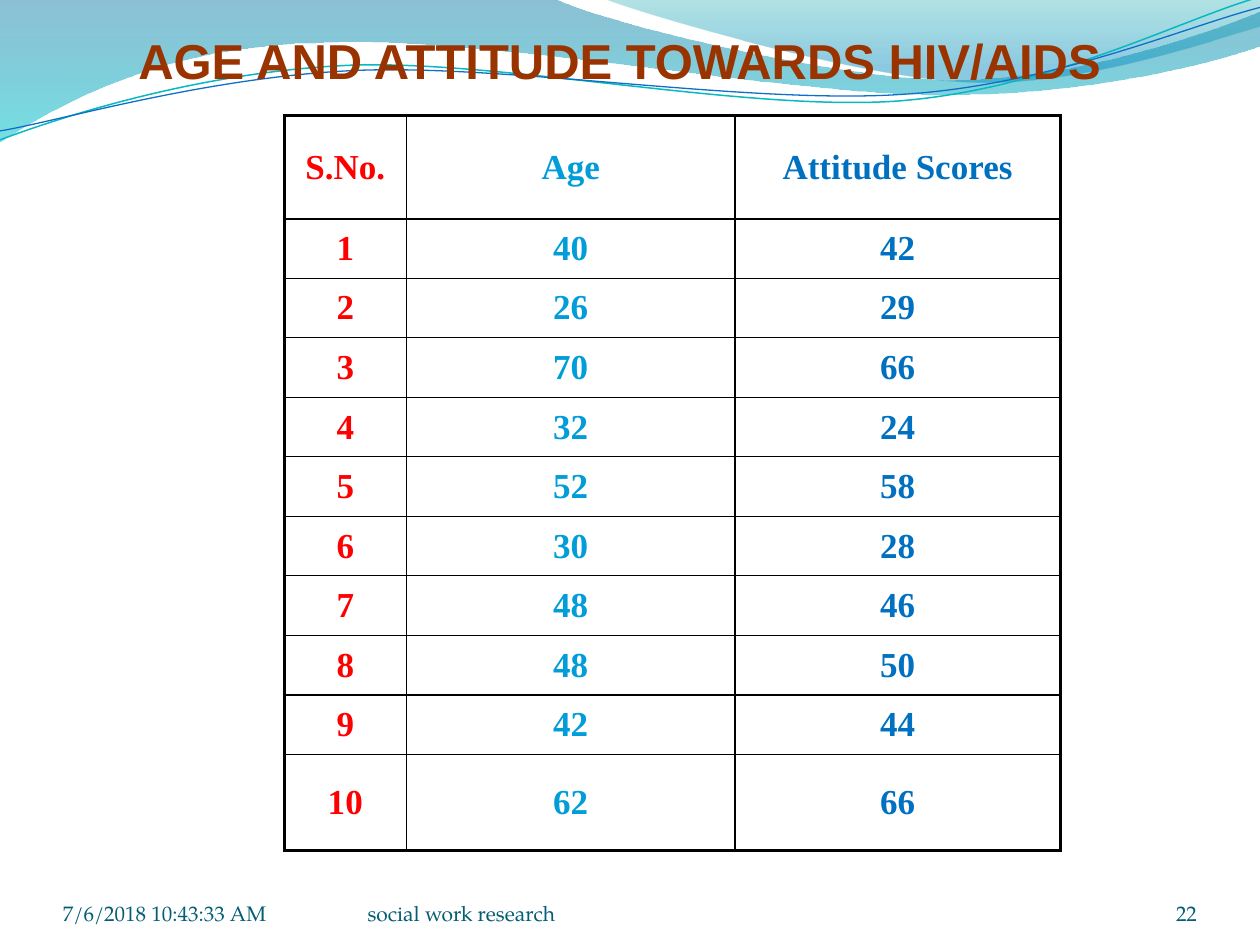
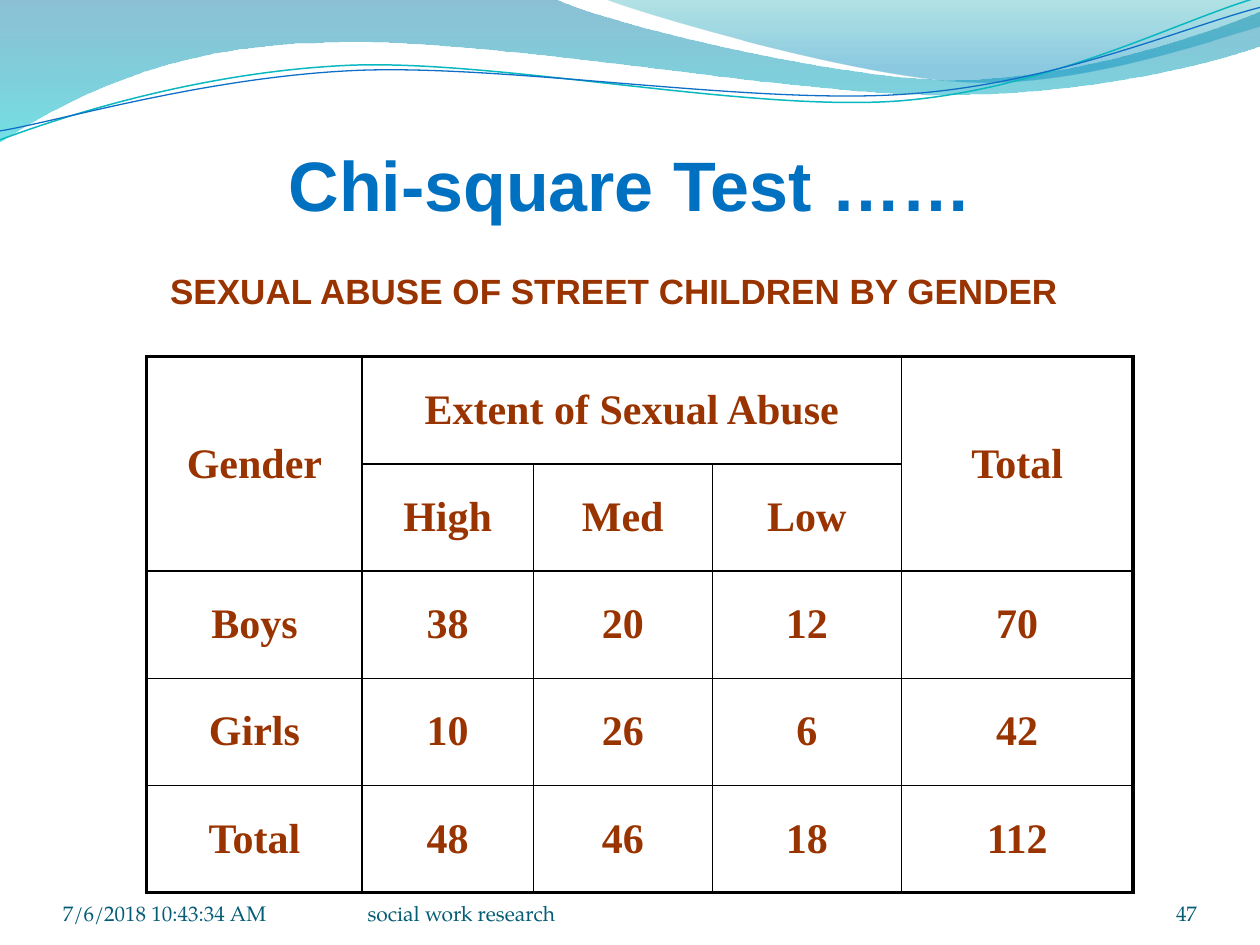
from dataclasses import dataclass

from pptx import Presentation
from pptx import util as u
from pptx.dml.color import RGBColor
from pptx.enum import text
from pptx.oxml import ns, xmlchemy


@dataclass(frozen=True)
class Theme:
    rust: str = "993300"
    red: str = "FF0000"
    sky: str = "009DD9"
    blue: str = "0070C0"
    foot: str = "045D75"
    ink: str = "000000"
    sans: str = "Arial"
    serif: str = "Times New Roman"
    book: str = "TeX Gyre Pagella"
    large: int = 40
    head: int = 28
    cell: int = 24
    body: int = 20
    small: int = 12


look = Theme()
left, mid, right = text.PP_ALIGN.LEFT, text.PP_ALIGN.CENTER, text.PP_ALIGN.RIGHT
top, centre, base = text.MSO_ANCHOR.TOP, text.MSO_ANCHOR.MIDDLE, text.MSO_ANCHOR.BOTTOM


def write(frame, words, face, size, tint, bold=True, align=mid):
    para = frame.paragraphs[0]
    para.text = words
    para.alignment = align
    font = para.font
    font.name, font.size, font.bold = face, u.Pt(size), bold
    font.color.rgb = RGBColor.from_string(tint)


def label(slide, box, anchor, inset, *style):
    frame = slide.shapes.add_textbox(*map(u.Cm, box)).text_frame
    frame.word_wrap = True
    frame.vertical_anchor = anchor
    frame.margin_left, frame.margin_top, frame.margin_right, frame.margin_bottom = map(u.Cm, inset)
    write(frame, *style)


bands = [
    ([(0, -0.03), (11.18, -0.03), (12.09, 0.43, 16.87, 1.6, 19.25, 1.6),
      (21.67, 1.6, 24.33, 0.66, 25.4, 0.23), (25.43, 0.91),
      (24.97, 1.12, 22.1, 1.93, 18.95, 1.91), (15.8, 1.91, 9.7, 0.71, 6.53, 0.86),
      (3.28, 0.89, 1.17, 2.11, -0.03, 2.87)],
     [(0, "0074A1", 45), (1, "00C6CF", 55)], None),
    ([(12.17, -0.03), (12.93, 0.28, 17.32, 1.57, 19.53, 1.65),
      (21.74, 1.75, 24.41, 0.81, 25.4, 0.53), (25.4, 0)],
     [(0, "00A1A9", 30), (0.8, "008BBF", 45)], None),
    ([(-0.05, 2.22), (1.19, 1.82, 4.02, 1.04, 7.05, 1.05),
      (10.05, 1.07, 15.02, 2.37, 18.08, 2.29), (21.13, 2.2, 23.86, 0.91, 25.41, 0.55)],
     None, ("0AB8BF", 0.85)),
    ([(-0.04, 2.04), (1.16, 1.9, 4.17, 1.15, 7.2, 1.16),
      (10.25, 1.18, 15.13, 2.23, 18.19, 2.16), (21.22, 2.11, 23.93, 1.06, 25.45, 0.75)],
     None, ("0F6FC6", 0.75)),
]

ages = [40, 26, 70, 32, 52, 30, 48, 48, 42, 62]
scores = [42, 29, 66, 24, 58, 28, 46, 50, 44, 66]
pages = [
    dict(
        stamp="7/6/2018 10:43:33 AM", num="22",
        labels=[((0, 0.62, 22.86, 2.34), top, (2.79, 0, 0.25, 0.13),
                 "AGE AND ATTITUDE TOWARDS HIV/AIDS", look.sans, look.head, look.rust, True, left)],
        spot=(5.73, 2.33), cols=[2.46, 6.63, 6.55], rows=[2.08] + [1.2] * 9 + [1.94],
        data=[("S.No.", "Age", "Attitude Scores"), *zip(range(1, 11), ages, scores)],
        tints=[look.red, look.sky, look.blue], size=look.body, heads=1, spans=[],
    ),
    dict(
        stamp="7/6/2018 10:43:34 AM", num="47",
        labels=[((1.69, 2.11, 22.02, 3.18), centre, (0.25, 0.13, 0.25, 0.13),
                 "Chi-square Test ……", look.sans, look.large, look.blue),
                ((3.18, 5.31, 19.69, 1.96), top, (0.25, 0.13, 0.25, 0.13),
                 "SEXUAL ABUSE OF STREET CHILDREN BY GENDER",
                 look.sans, look.body, look.rust, True, left)],
        spot=(2.96, 7.19), cols=[4.34, 3.45, 3.61, 3.81, 4.67], rows=[2.16] * 5,
        data=[("Gender", "Extent of Sexual Abuse", "", "", "Total"),
              ("", "High", "Med", "Low", ""),
              ("Boys", 38, 20, 12, 70), ("Girls", 10, 26, 6, 42), ("Total", 48, 46, 18, 112)],
        tints=[look.rust] * 5, size=look.cell, heads=2,
        spans=[(0, 0, 1, 0), (0, 1, 0, 3), (0, 4, 1, 4)],
    ),
]

deck = Presentation()
deck.slide_width, deck.slide_height = u.Cm(25.4), u.Cm(19.05)
blank = deck.slide_layouts[6]
slides = [deck.slides.add_slide(blank) for page in pages]

for route, stops, line in bands:
    pen = slides[0].shapes.build_freeform(*map(u.Cm, route[0]))
    pen.add_line_segments([tuple(map(u.Cm, step[-2:])) for step in route[1:]], close=bool(stops))
    wave = pen.convert_to_shape()
    wave.shadow.inherit = False
    for node, step in zip(wave._element.spPr.xpath(".//a:lnTo"), route[1:]):
        if len(step) == 6:
            curve = xmlchemy.OxmlElement("a:cubicBezTo")
            for x, y in zip(step[::2], step[1::2]):
                dot = xmlchemy.OxmlElement("a:pt")
                dot.set("x", str(u.Cm(x) - wave.left))
                dot.set("y", str(u.Cm(y) - wave.top))
                curve.append(dot)
            node.getparent().replace(node, curve)
    if stops:
        wave.line.fill.background()
        wave.fill.gradient()
        wave.fill.gradient_angle = 270
        nodes = wave._element.spPr.xpath(".//a:gs")
        for stop, node, (place, tint, alpha) in zip(wave.fill.gradient_stops, nodes, stops):
            stop.position = place
            stop.color.rgb = RGBColor.from_string(tint)
            clear = xmlchemy.OxmlElement("a:alpha")
            clear.set("val", str(alpha * 1000))
            node[0].append(clear)
    else:
        wave.rotation = 357.3
        wave.fill.background()
        wave.line.color.rgb = RGBColor.from_string(line[0])
        wave.line.width = u.Pt(line[1])
    blank.shapes._spTree.append(wave._element)

for slide, page in zip(slides, pages):
    cols, rows = page["cols"], page["rows"]
    grid = slide.shapes.add_table(len(rows), len(cols), *map(u.Cm, (*page["spot"], sum(cols), sum(rows)))).table
    grid.first_row = grid.horz_banding = False
    grid._tbl.tblPr.find(ns.qn("a:tableStyleId")).text = "{2D5ABB26-0587-4C30-8999-92F81FD0307C}"
    for col, wide in zip(grid.columns, cols):
        col.width = u.Cm(wide)
    for row, tall in zip(grid.rows, rows):
        row.height = u.Cm(tall)
    for r, c, last, end in page["spans"]:
        grid.cell(r, c).merge(grid.cell(last, end))

    across = [2] + [1 if i <= page["heads"] else 0.75 for i in range(1, len(rows))] + [2]
    down = [2] + [1] * (len(cols) - 1) + [2]
    for r, items in enumerate(page["data"]):
        for c, item in enumerate(items):
            cell = grid.cell(r, c)
            if cell.is_spanned:
                continue
            cell.vertical_anchor = centre
            write(cell.text_frame, str(item), look.serif, page["size"], page["tints"][c])
            edges = {"a:lnL": down[c], "a:lnR": down[c + cell.span_width],
                     "a:lnT": across[r], "a:lnB": across[r + cell.span_height]}
            for tag, width in edges.items():
                edge = xmlchemy.OxmlElement(tag)
                edge.set("w", str(u.Pt(width)))
                fill = xmlchemy.OxmlElement("a:solidFill")
                tint = xmlchemy.OxmlElement("a:srgbClr")
                tint.set("val", look.ink)
                fill.append(tint)
                edge.append(fill)
                cell._tc.get_or_add_tcPr().append(edge)
            cell.fill.background()

    for item in page["labels"]:
        label(slide, *item)
    for words, x, wide, align in [(page["stamp"], 1.27, 5.92, left),
                                  (page["num"], 22.02, 2.11, right),
                                  ("social work research", 7.41, 9.32, left)]:
        label(slide, (x, 17.65, wide, 1.02), base, (0, 0, 0, 0),
              words, look.book, look.small, look.foot, False, align)

deck.save("out.pptx")
